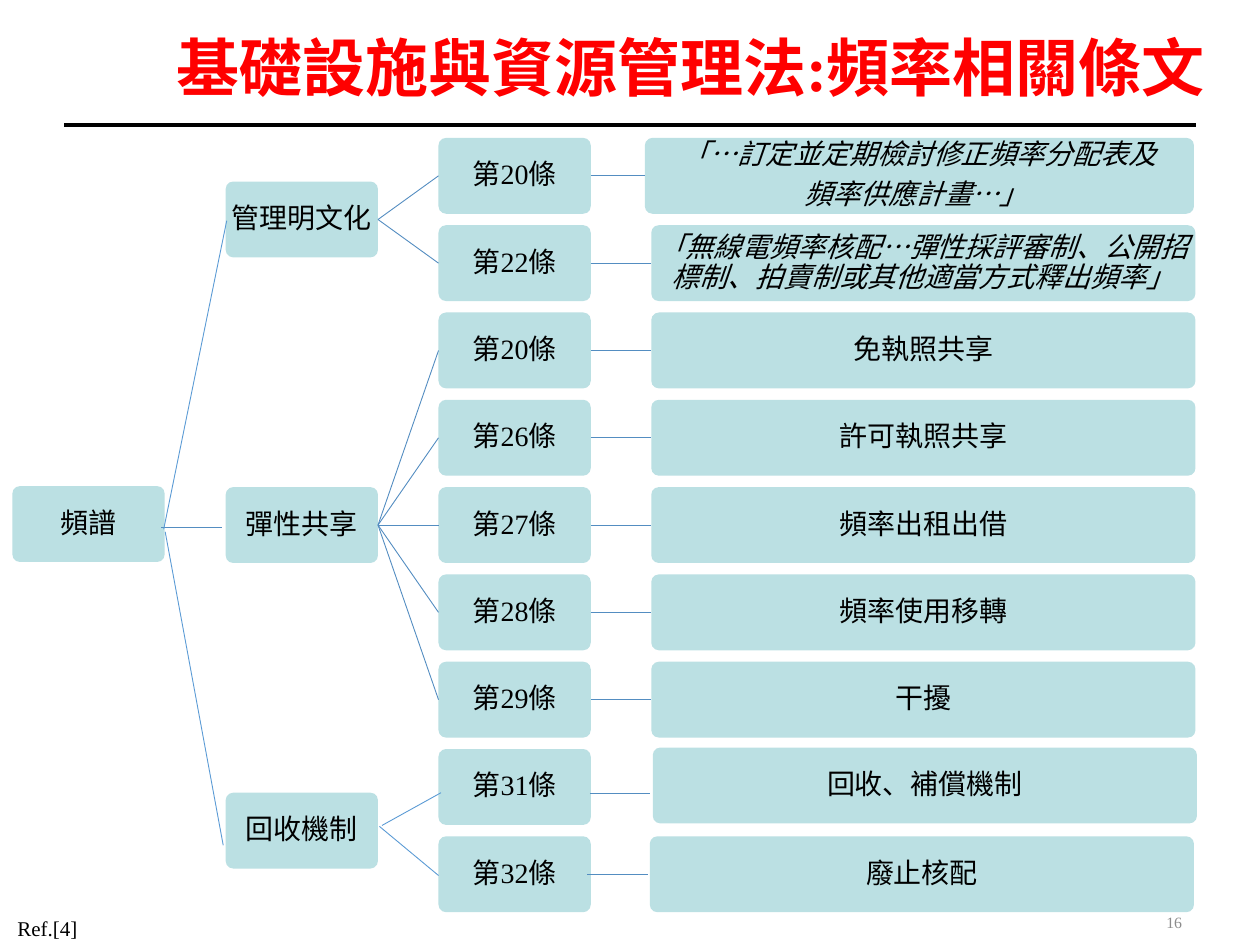
import pptx
import pptx.util
import pptx.dml.color
import pptx.enum.shapes
import pptx.enum.text
import pptx.oxml
import pptx.oxml.ns

Cm = pptx.util.Cm
Pt = pptx.util.Pt
Rgb = pptx.dml.color.RGBColor.from_string
Align = pptx.enum.text.PP_ALIGN
Anchor = pptx.enum.text.MSO_ANCHOR
Kind = pptx.enum.shapes.MSO_SHAPE
Straight = pptx.enum.shapes.MSO_CONNECTOR.STRAIGHT


class Theme:
    font = "Times New Roman"
    title = Rgb("FF0000")
    ink = Rgb("000000")
    fill = Rgb("BBE0E3")
    line = Rgb("538DC1")
    trunk = Rgb("5B9BD5")
    page = Rgb("8C8C8C")
    head = 36
    body = 16
    note = 12
    small = 9
    thin = 0.5
    thick = 2.75


def write(shape, text, size=Theme.body, color=Theme.ink, align=Align.CENTER,
          anchor=Anchor.MIDDLE, bold=False, italic=False, inset=None,
          lead=None, after=None):
    frame = shape.text_frame
    frame.word_wrap = True
    frame.vertical_anchor = anchor
    if inset is not None:
        frame.margin_left = frame.margin_right = Cm(inset)
        frame.margin_top = frame.margin_bottom = Cm(inset)
    for i, part in enumerate(text.split("\n")):
        para = frame.add_paragraph() if i else frame.paragraphs[0]
        para.alignment = align
        if lead:
            para.line_spacing = lead
        if after:
            para.space_after = Pt(after)
        run = para.add_run()
        run.text = part
        run.font.name = Theme.font
        run.font.size = Pt(size)
        run.font.bold = bold
        run.font.italic = italic
        run.font.color.rgb = color


def link(x1, y1, x2, y2, color=Theme.line, width=Theme.thin):
    wire = slide.shapes.add_connector(Straight, Cm(x1), Cm(y1), Cm(x2), Cm(y2))
    wire.line.color.rgb = color
    wire.line.width = Pt(width)
    props = wire._element.spPr
    props.append(pptx.oxml.parse_xml(
        "<a:effectLst %s/>" % pptx.oxml.ns.nsdecls("a")))
    return wire


deck = pptx.Presentation()
deck.slide_width = Cm(25.4)
deck.slide_height = Cm(19.05)
slide = deck.slides.add_slide(deck.slide_layouts[6])

title = slide.shapes.add_textbox(Cm(2.49), Cm(0.36), Cm(22.86), Cm(2.16))
write(title, "基礎設施與資源管理法:頻率相關條文", size=Theme.head,
      color=Theme.title, bold=True, lead=0.9)
link(1.3, 2.52, 24.1, 2.52, color=Theme.ink, width=Theme.thick)

top, step = 2.78, 1.76
tall, wide, broad = 1.53, 3.07, 10.97
left, mid, right = 4.55, 8.84, 13.13

topics = [("管理明文化", 0.5), ("彈性共享", 4), ("回收機制", 7.5)]
rows = [
    (0, "第20條", "「…訂定並定期檢討修正頻率分配表及\n頻率供應計畫…」 "),
    (0, "第22條", "「無線電頻率核配…彈性採評審制、公開招標制、拍賣制或其他適當方式釋出頻率」"),
    (1, "第20條", "免執照共享"),
    (1, "第26條", "許可執照共享"),
    (1, "第27條", "頻率出租出借"),
    (1, "第28條", "頻率使用移轉"),
    (1, "第29條", "干擾"),
    (2, "第31條", "回收、補償機制"),
    (2, "第32條", "廢止核配"),
]
shift = {0: (-0.13, 0, 0.1), 7: (0.03, -0.03, 0), 8: (-0.03, 0, 0)}

nodes = [("頻譜", 0.25, 9.8, wide)]
nodes += [(name, left, top + step * row, wide) for name, row in topics]
for i, (topic, clause, gist) in enumerate(rows):
    dx, dy, dw = shift.get(i, (0, 0, 0))
    y = top + step * i
    nodes.append((clause, mid, y, wide))
    nodes.append((gist, right + dx, y + dy, broad + dw))

boxes = []
for text, x, y, w in nodes:
    box = slide.shapes.add_shape(
        Kind.ROUNDED_RECTANGLE, Cm(x), Cm(y), Cm(w), Cm(tall))
    box.adjustments[0] = 0.1
    box.shadow.inherit = False
    box.fill.solid()
    box.fill.fore_color.rgb = Theme.fill
    box.line.fill.background()
    write(box, text, italic=text.startswith("「"), inset=0.08,
          lead=0.9, after=5.6)
    boxes.append(box)

heads, clauses, gists = boxes[1:4], boxes[4::2], boxes[5::2]
for (topic, _, _), clause, gist in zip(rows, clauses, gists):
    if topic == 2:
        continue
    for start, end in [(heads[topic], clause), (clause, gist)]:
        wire = link(0, 0, 1, 1)
        wire.begin_connect(start, 3)
        wire.end_connect(end, 1)

for x1, y1, x2, y2, color in [
    (11.89, 16, 13.11, 16, Theme.line),
    (11.84, 17.63, 13.06, 17.63, Theme.line),
    (3.25, 10.64, 4.47, 10.64, Theme.line),
    (4.57, 4.45, 3.3, 10.67, Theme.trunk),
    (3.33, 10.72, 4.5, 17.04, Theme.trunk),
    (7.7, 16.64, 8.89, 15.98, Theme.trunk),
    (7.65, 16.66, 8.84, 17.65, Theme.trunk),
]:
    link(x1, y1, x2, y2, color=color)

ref = slide.shapes.add_textbox(Cm(0.1), Cm(18.34), Cm(10.8), Cm(0.76))
write(ref, "Ref.[4]", size=Theme.note, align=Align.LEFT, anchor=Anchor.TOP)
page = slide.shapes.add_textbox(Cm(18.36), Cm(18.08), Cm(5.72), Cm(1.02))
write(page, "16", size=Theme.small, color=Theme.page, align=Align.RIGHT)

deck.save("out.pptx")
